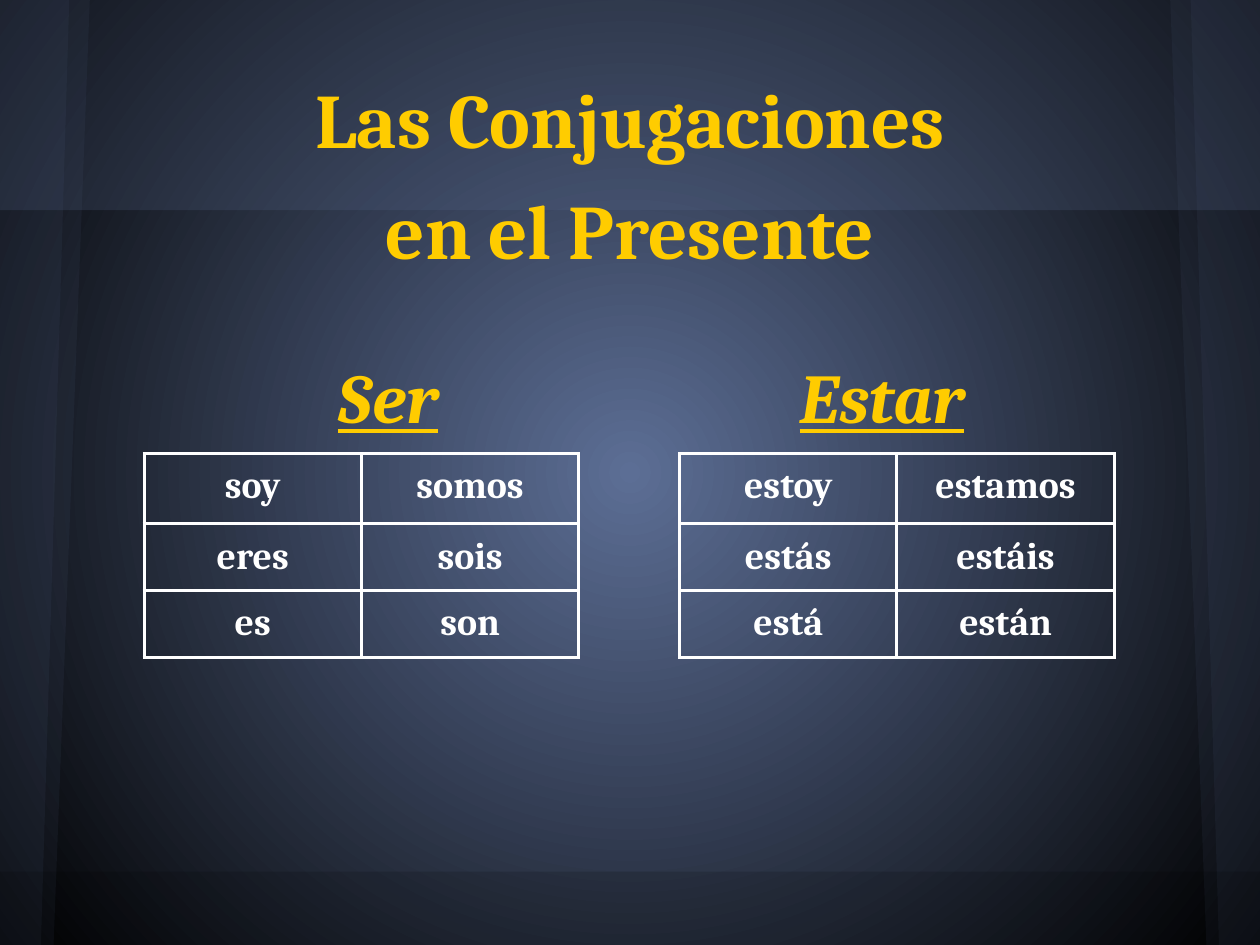
from dataclasses import dataclass

from lxml import etree
from pptx import Presentation
from pptx.dml.color import RGBColor
from pptx.enum import shapes, text
from pptx.oxml import ns
from pptx.util import Pt


@dataclass(frozen=True)
class Theme:
    font: str = "Cambria"
    gold: RGBColor = RGBColor(0xFF, 0xCC, 0x00)
    white: RGBColor = RGBColor(0xFF, 0xFF, 0xFF)
    slate: RGBColor = RGBColor(0x5C, 0x6E, 0x95)
    black: RGBColor = RGBColor(0, 0, 0)
    title_size: float = 48.9
    verb_size: float = 44.4
    form_size: float = 24


THEME = Theme()
WIDTH, HEIGHT = 800, 600
VERBS = [
    # verb, heading left and width, table left, forms
    ("Ser", 188.5, 115.5, 91.5,
     [("soy", "somos"), ("eres", "sois"), ("es", "son")]),
    ("Estar", 489, 142, 431.5,
     [("estoy", "estamos"), ("estás", "estáis"), ("está", "están")]),
]


def set_background(slide):
    """Fill the slide with a radial gradient, light at the centre."""
    fill = slide.background.fill
    fill.gradient()
    for stop, color in zip(fill.gradient_stops, (THEME.slate, THEME.black)):
        stop.color.rgb = color
    linear = slide.element.find(".//" + ns.qn("a:lin"))
    radial = etree.Element(ns.qn("a:path"), path="circle")
    etree.SubElement(radial, ns.qn("a:fillToRect"),
                     l="50000", t="50000", r="50000", b="50000")
    linear.getparent().replace(linear, radial)


def tint(shape, color, opacity):
    """Give a shape a see-through fill, opacity in percent, and no outline."""
    shape.shadow.inherit = False
    shape.line.fill.background()
    shape.fill.solid()
    shape.fill.fore_color.rgb = color
    color_node = shape.element.spPr.find(".//" + ns.qn("a:srgbClr"))
    etree.SubElement(color_node, ns.qn("a:alpha"), val=str(opacity * 1000))


def add_band(slide, top, height, color, opacity):
    band = slide.shapes.add_shape(shapes.MSO_SHAPE.RECTANGLE, 0, Pt(top),
                                  Pt(WIDTH), Pt(height))
    tint(band, color, opacity)


def add_curtain(slide, edge, top_x, bottom_x):
    """Draw a strip along a slide edge that narrows towards the bottom."""
    outline = slide.shapes.build_freeform(edge, 0, scale=Pt(1))
    outline.add_line_segments([(top_x, 0), (bottom_x, HEIGHT), (edge, HEIGHT)])
    tint(outline.convert_to_shape(), THEME.slate, 9)


def add_run(paragraph, words, size, color, emphasis=None):
    run = paragraph.add_run()
    run.text = words
    font = run.font
    font.name, font.size, font.bold = THEME.font, Pt(size), True
    font.italic = font.underline = emphasis
    font.color.rgb = color


def write_heading(shape, lines, size, anchor, emphasis=None):
    frame = shape.text_frame
    frame.word_wrap = True
    frame.auto_size = text.MSO_AUTO_SIZE.NONE
    frame.vertical_anchor = anchor
    frame.margin_left = frame.margin_right = Pt(3)
    frame.margin_top = frame.margin_bottom = Pt(3)
    for index, line in enumerate(lines):
        paragraph = frame.add_paragraph() if index else frame.paragraphs[0]
        paragraph.alignment = text.PP_ALIGN.CENTER
        paragraph.line_spacing = 1.2
        paragraph.space_before = Pt(0)
        add_run(paragraph, line, size, THEME.gold, emphasis)


def place_title(slide, lines):
    title = slide.shapes.title
    title.left, title.top = Pt(65), Pt(24)
    title.width, title.height = Pt(670), Pt(160.5)
    title.element.getparent().append(title.element)  # in front of the bands
    write_heading(title, lines, THEME.title_size, text.MSO_ANCHOR.MIDDLE)


def add_borders(cell):
    properties = cell._tc.get_or_add_tcPr()
    for index, side in enumerate(("lnL", "lnR", "lnT", "lnB")):
        border = etree.Element(ns.qn("a:" + side), w=str(Pt(2.25)))
        fill = etree.SubElement(border, ns.qn("a:solidFill"))
        etree.SubElement(fill, ns.qn("a:srgbClr"), val=str(THEME.white))
        properties.insert(index, border)


def add_conjugation(slide, left, forms):
    heights = (44.5, 42.5, 42.5)
    column_width = 138
    table = slide.shapes.add_table(
        len(forms), 2, Pt(left), Pt(288), Pt(2 * column_width),
        Pt(sum(heights))).table
    table.first_row = table.horz_banding = False
    for column in table.columns:
        column.width = Pt(column_width)
    for row, height, pair in zip(table.rows, heights, forms):
        row.height = Pt(height)
        for cell, form in zip(row.cells, pair):
            cell.fill.background()
            cell.margin_left = cell.margin_right = Pt(7.2)
            cell.margin_top = cell.margin_bottom = Pt(7.2)
            paragraph = cell.text_frame.paragraphs[0]
            paragraph.alignment = text.PP_ALIGN.CENTER
            add_run(paragraph, form, THEME.form_size, THEME.white)
            add_borders(cell)


def main():
    deck = Presentation()
    deck.slide_width, deck.slide_height = Pt(WIDTH), Pt(HEIGHT)
    slide = deck.slides.add_slide(deck.slide_layouts[5])
    set_background(slide)
    add_band(slide, 0, 133.5, THEME.slate, 20)
    for top_x, bottom_x in ((57, 34.5), (44, 26.5)):
        add_curtain(slide, 0, top_x, bottom_x)
        add_curtain(slide, WIDTH, WIDTH - top_x, WIDTH - bottom_x)
    add_band(slide, 553.5, 46.5, THEME.black, 14)
    place_title(slide, ["Las Conjugaciones", "en el Presente"])
    for verb, heading_left, heading_width, table_left, forms in VERBS:
        heading = slide.shapes.add_textbox(
            Pt(heading_left), Pt(211), Pt(heading_width), Pt(59))
        write_heading(heading, [verb], THEME.verb_size, text.MSO_ANCHOR.TOP,
                      emphasis=True)
        add_conjugation(slide, table_left, forms)
    deck.save("out.pptx")


if __name__ == "__main__":
    main()
